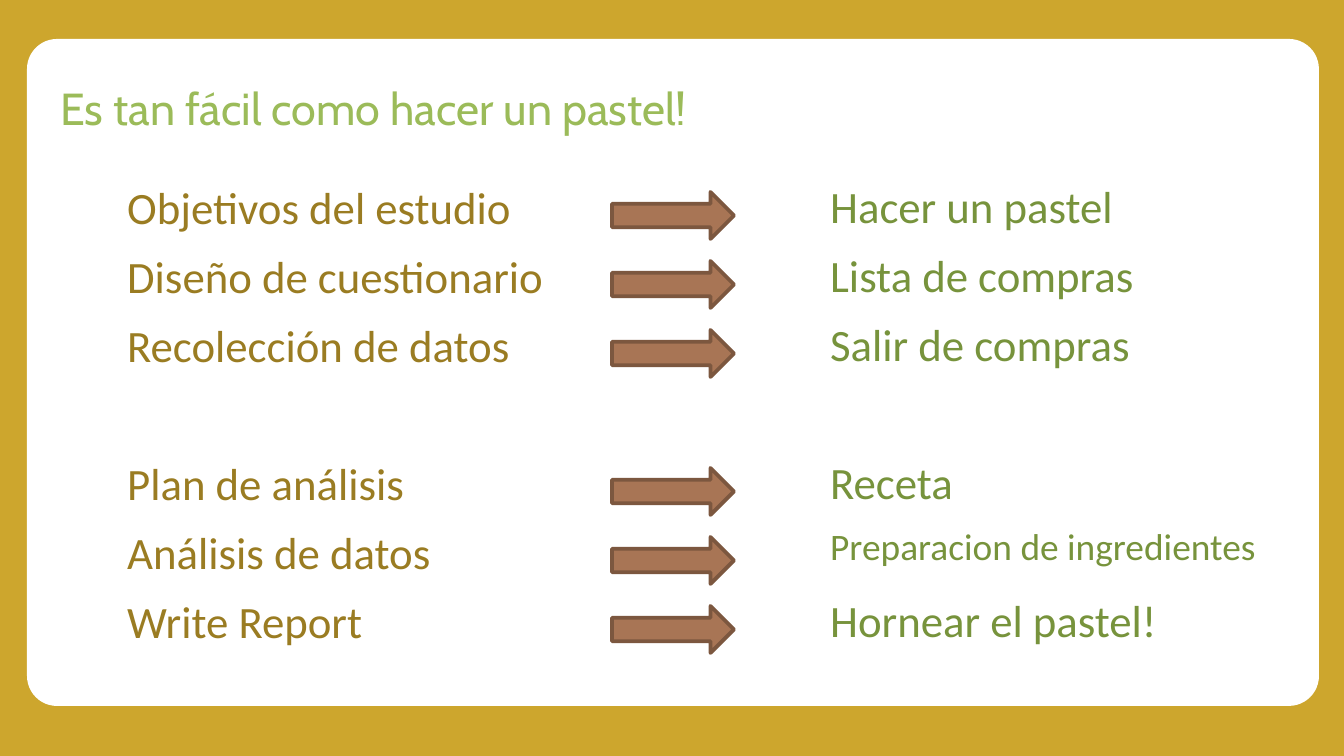
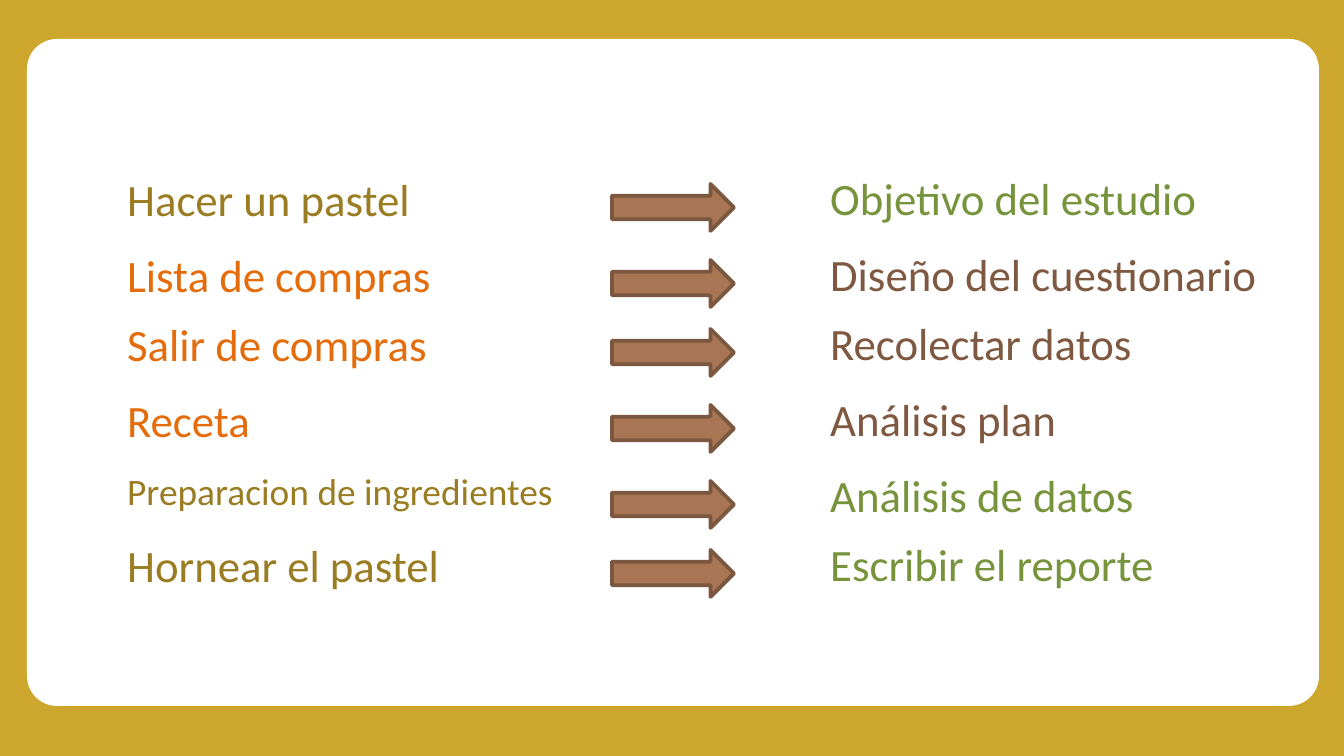
from dataclasses import dataclass

from pptx import Presentation
from pptx.dml.color import RGBColor
from pptx.enum.shapes import MSO_SHAPE
from pptx.enum.text import MSO_ANCHOR, MSO_AUTO_SIZE, PP_ALIGN
from pptx.util import Emu, Pt

ROUND_RECT = MSO_SHAPE.ROUNDED_RECTANGLE
RIGHT_ARROW = MSO_SHAPE.RIGHT_ARROW
MIDDLE = MSO_ANCHOR.MIDDLE
GROW = MSO_AUTO_SIZE.SHAPE_TO_FIT_TEXT
LEFT = PP_ALIGN.LEFT

EMU_PER_PX = 914400 / 134.4
TITLE_ONLY, BLANK = 5, 6


@dataclass(frozen=True)
class Theme:
    frame: str = "CDA62D"
    panel: str = "FFFFFF"
    title: str = "9BBB59"
    gold: str = "9A7C22"
    green: str = "77933C"
    orange: str = "E46C0A"
    brown: str = "7E5840"
    arrow: str = "A87555"
    arrow_edge: str = "7C573F"
    title_font: str = "Cabin"
    body_font: str = "Calibri"
    size: int = 24
    small: int = 20


THEME = Theme()

# Shared row layout, in px
LEFT_X, ARROW_X, RIGHT_X = 114, 612, 817
ROW_PITCH = 69
RIGHT_SHIFT, ARROW_SHIFT = -1, 19
ARROW_WIDTH, ARROW_HEIGHT = 122, 47
LABEL_HEIGHT = {THEME.size: 68, THEME.small: 59}


@dataclass(frozen=True)
class Label:
    text: str
    width: int
    size: int = THEME.size


@dataclass(frozen=True)
class Block:
    """Consecutive rows that share a colour for each column."""
    rows: tuple
    left_color: str = THEME.gold
    right_color: str = THEME.green


MAKE_CAKE = Label("Hacer un pastel", 313)
SHOPPING_LIST = Label("Lista de compras", 333)
GO_SHOPPING = Label("Salir de compras", 329)
RECIPE = Label("Receta", 151)
INGREDIENTS = Label("Preparacion de ingredientes", 457, THEME.small)
DATA_ANALYSIS = Label("Análisis de datos", 333)

STUDY_TO_CAKE = (
    Block((
        (Label("Objetivos del estudio", 415), MAKE_CAKE),
        (Label("Diseño de cuestionario", 448), SHOPPING_LIST),
        (Label("Recolección de datos", 413), GO_SHOPPING),
    )),
    Block((
        (Label("Plan de análisis", 306), RECIPE),
        (DATA_ANALYSIS, INGREDIENTS),
        (Label("Write Report", 265), Label("Hornear el pastel!", 358)),
    )),
)

CAKE_TO_STUDY = (
    Block(((MAKE_CAKE, Label("Objetivo del estudio", 396)),)),
    Block((
        (SHOPPING_LIST, Label("Diseño del cuestionario", 457)),
        (GO_SHOPPING, Label("Recolectar datos", 332)),
    ), THEME.orange, THEME.brown),
    Block(((RECIPE, Label("Análisis plan", 255)),), THEME.orange, THEME.brown),
    Block((
        (INGREDIENTS, DATA_ANALYSIS),
        (Label("Hornear el pastel", 343), Label("Escribir el reporte", 353)),
    )),
)


def px(*lengths):
    return [Emu(round(length * EMU_PER_PX)) for length in lengths]


def rgb(color):
    return RGBColor.from_string(color)


def write(frame, text, *, font, size, color, align=LEFT):
    para = frame.paragraphs[0]
    para.alignment = align
    span = para.add_run()
    span.text = text
    span.font.name = font
    span.font.size = Pt(size)
    span.font.color.rgb = rgb(color)


def add_filled(shapes, kind, at, fill, edge=None):
    shape = shapes.add_shape(kind, *px(*at))
    shape.shadow.inherit = False
    shape.fill.solid()
    shape.fill.fore_color.rgb = rgb(fill)
    if edge:
        shape.line.color.rgb = rgb(edge)
        shape.line.width = Pt(2)
    else:
        shape.line.fill.background()
    return shape


def add_label(shapes, label, left, top, color):
    box = shapes.add_textbox(*px(left, top, label.width, LABEL_HEIGHT[label.size]))
    frame = box.text_frame
    frame.word_wrap = False
    frame.auto_size = GROW
    write(frame, label.text, font=THEME.body_font, size=label.size, color=color)


def add_row(shapes, row, top, block):
    left, right = row
    add_label(shapes, left, LEFT_X, top, block.left_color)
    add_label(shapes, right, RIGHT_X, top + RIGHT_SHIFT, block.right_color)
    arrow_at = ARROW_X, top + ARROW_SHIFT, ARROW_WIDTH, ARROW_HEIGHT
    add_filled(shapes, RIGHT_ARROW, arrow_at, THEME.arrow, THEME.arrow_edge)


def add_blocks(page, blocks, *, top, gap, grouped=False):
    """Stack the blocks, with extra space of gap between them."""
    for block in blocks:
        shapes = page.shapes.add_group_shape().shapes if grouped else page.shapes
        for row in block.rows:
            add_row(shapes, row, top, block)
            top += ROW_PITCH
        top += gap


def set_title(page, text):
    title = page.shapes.title
    title.left, title.top, title.width, title.height = px(47, 60, 1230, 95)
    title.text_frame.vertical_anchor = MIDDLE
    write(title.text_frame, text, font=THEME.title_font, size=THEME.size,
          color=THEME.title)


def dress_master(deck, page):
    """Put the gold frame and the white panel behind every slide."""
    master = deck.slide_master
    master.background.fill.solid()
    master.background.fill.fore_color.rgb = rgb(THEME.frame)
    panel = add_filled(page.shapes, ROUND_RECT, (27, 39, 1292, 667), THEME.panel)
    panel.adjustments[0] = 0.045
    master.shapes.element.insert(2, panel.element)


def main():
    deck = Presentation()
    deck.slide_width, deck.slide_height = px(1344, 756)

    # Study steps matched to cake steps
    page = deck.slides.add_slide(deck.slide_layouts[TITLE_ONLY])
    dress_master(deck, page)
    set_title(page, "Es tan fácil como hacer un pastel!")
    add_blocks(page, STUDY_TO_CAKE, top=173, gap=ROW_PITCH)

    # Cake steps matched to study steps
    page = deck.slides.add_slide(deck.slide_layouts[BLANK])
    add_blocks(page, CAKE_TO_STUDY, top=165, gap=7, grouped=True)

    deck.save("out.pptx")


if __name__ == "__main__":
    main()
